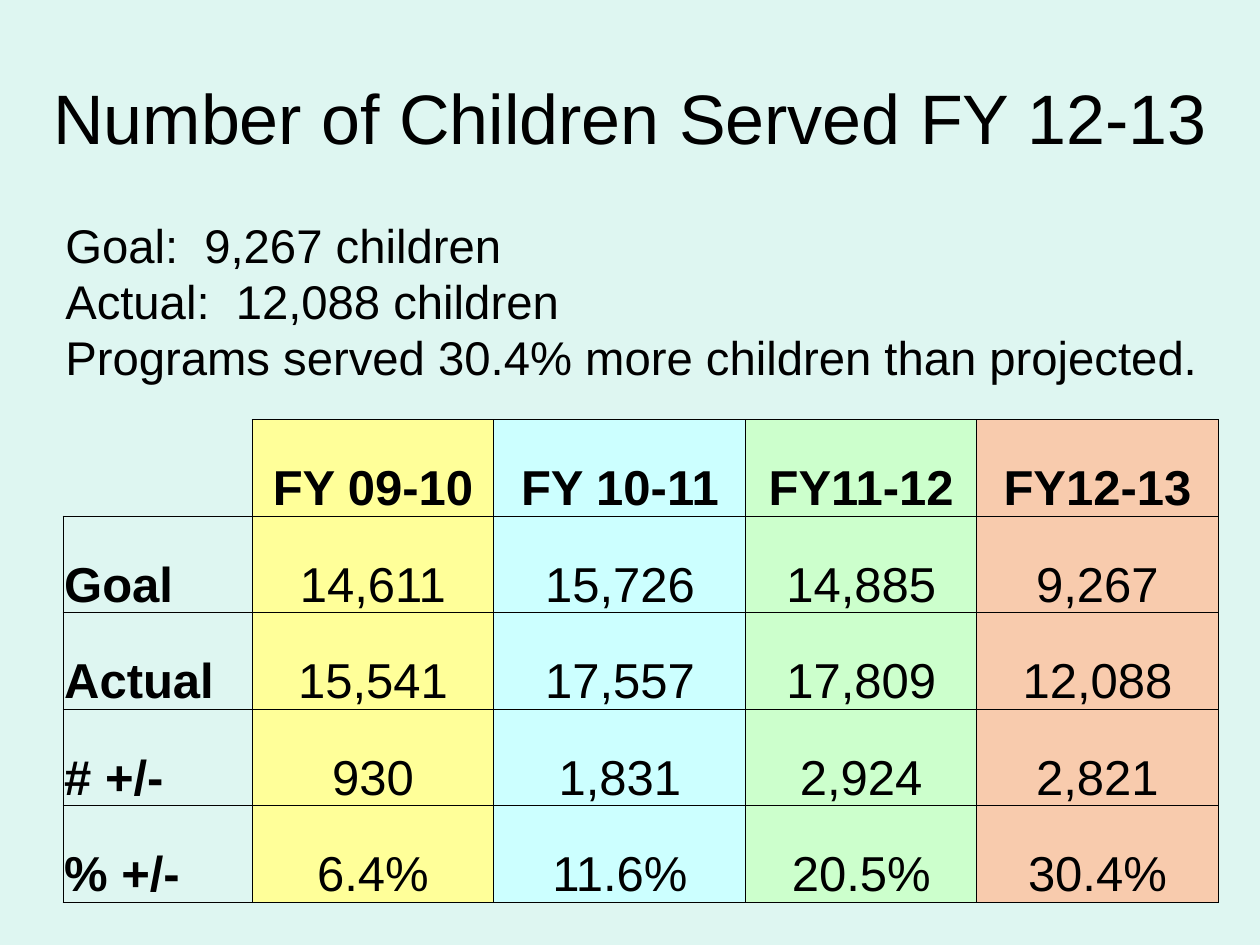
from lxml.etree import SubElement
from pptx import Presentation
from pptx.dml.color import RGBColor as Rgb
from pptx.enum.text import MSO_ANCHOR as Anchor, PP_ALIGN as Align
from pptx.oxml.ns import qn
from pptx.util import Inches, Pt

ROWS = [
    ["", "FY 09-10", "FY 10-11", "FY11-12", "FY12-13"],
    ["Goal", "14,611", "15,726", "14,885", "9,267"],
    ["Actual", "15,541", "17,557", "17,809", "12,088"],
    ["# +/-", "930", "1,831", "2,924", "2,821"],
    ["% +/-", "6.4%", "11.6%", "20.5%", "30.4%"],
]
FILLS = [None, "FFFF99", "CCFFFF", "CCFFCC", "F8CBAD"]
WIDTHS = [1.5, 1.92, 2, 1.83, 1.92]
LINES = [
    "Goal:  9,267 children",
    "Actual:  12,088 children",
    "Programs served 30.4% more children than projected.",
]


def color(code):
    return Rgb.from_string(code)


class Deck:
    font = "Arial"
    ink = "000000"

    def __init__(self, slide):
        self.slide = slide

    def ground(self, code):
        fill = self.slide.background.fill
        fill.solid()
        fill.fore_color.rgb = color(code)

    def style(self, para, size, bold=False, align=Align.LEFT):
        para.alignment = align
        for run in para.runs:
            font = run.font
            font.name, font.size, font.bold = self.font, Pt(size), bold
            font.color.rgb = color(self.ink)

    def title(self, text, box, size):
        shape = self.slide.shapes.title
        shape.left, shape.top, shape.width, shape.height = map(Inches, box)
        frame = shape.text_frame
        frame.text = text
        frame.vertical_anchor = Anchor.MIDDLE
        self.style(frame.paragraphs[0], size, align=Align.CENTER)

    def body(self, lines, box, size):
        frame = self.slide.shapes.add_textbox(*map(Inches, box)).text_frame
        frame.word_wrap = True
        frame.text = "\n".join(lines)
        for para in frame.paragraphs:
            para.line_spacing = 0.8
            para.space_before = Pt(6.2)
            self.style(para, size)

    def border(self, cell, sides):
        props = cell._tc.get_or_add_tcPr()
        for spot, side in enumerate("LRTB"):
            line = SubElement(props, qn(f"a:ln{side}"), w=str(Pt(0.5)))
            props.insert(spot, line)
            if side in sides:
                fill = SubElement(line, qn("a:solidFill"))
                SubElement(fill, qn("a:srgbClr"), val=self.ink)
            else:
                SubElement(line, qn("a:noFill"))

    def cell(self, cell, text, fill, size, bold, align):
        cell.margin_left = cell.margin_right = cell.margin_top = Inches(0.01)
        cell.margin_bottom = 0
        cell.vertical_anchor = Anchor.BOTTOM
        cell.text = text
        self.style(cell.text_frame.paragraphs[0], size, bold, align)
        if fill:
            cell.fill.solid()
            cell.fill.fore_color.rgb = color(fill)
        else:
            cell.fill.background()
        self.border(cell, "LRTB" if text else "RB")

    def table(self, rows, widths, fills, box, size):
        shape = self.slide.shapes.add_table(
            len(rows), len(widths), *map(Inches, box))
        table = shape.table
        table.first_row = table.horz_banding = False
        for col, width in zip(table.columns, widths):
            col.width = Inches(width)
        for r, row in enumerate(rows):
            for c, text in enumerate(row):
                bold = r == 0 or c == 0
                align = Align.CENTER if c else Align.LEFT
                self.cell(table.cell(r, c), text, fills[c], size, bold, align)


def main():
    show = Presentation()
    show.slide_width, show.slide_height = Inches(10), Inches(7.5)
    deck = Deck(show.slides.add_slide(show.slide_layouts[5]))
    deck.ground("DEF6F1")
    deck.title("Number of Children Served FY 12-13", (0.25, 0.3, 9.5, 1.25), 40)
    deck.body(LINES, (0.42, 1.75, 9.33, 1.42), 27)
    deck.table(ROWS, WIDTHS, FILLS, (0.5, 3.33, 9.17, 3.83), 28)
    show.save("out.pptx")


if __name__ == "__main__":
    main()
